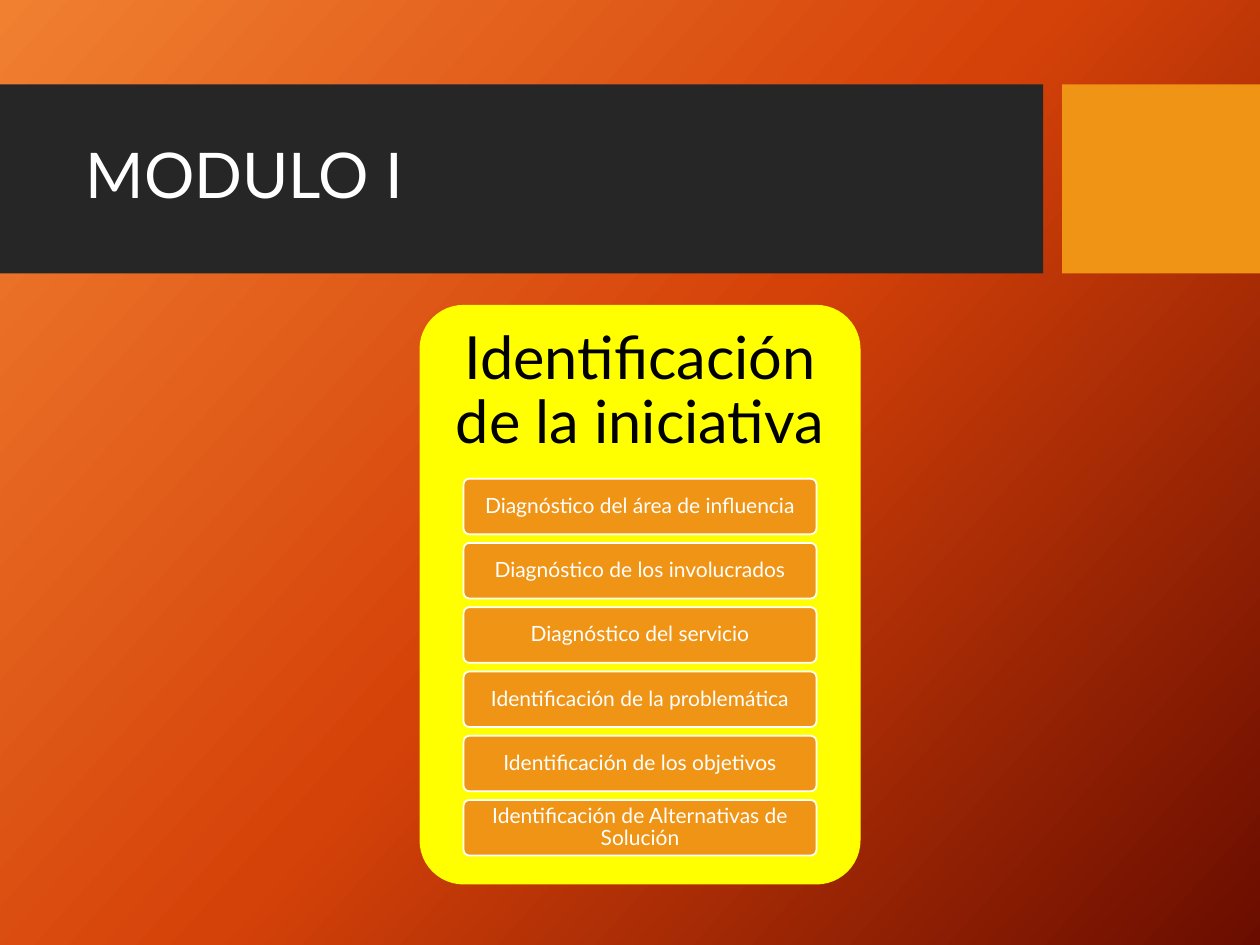
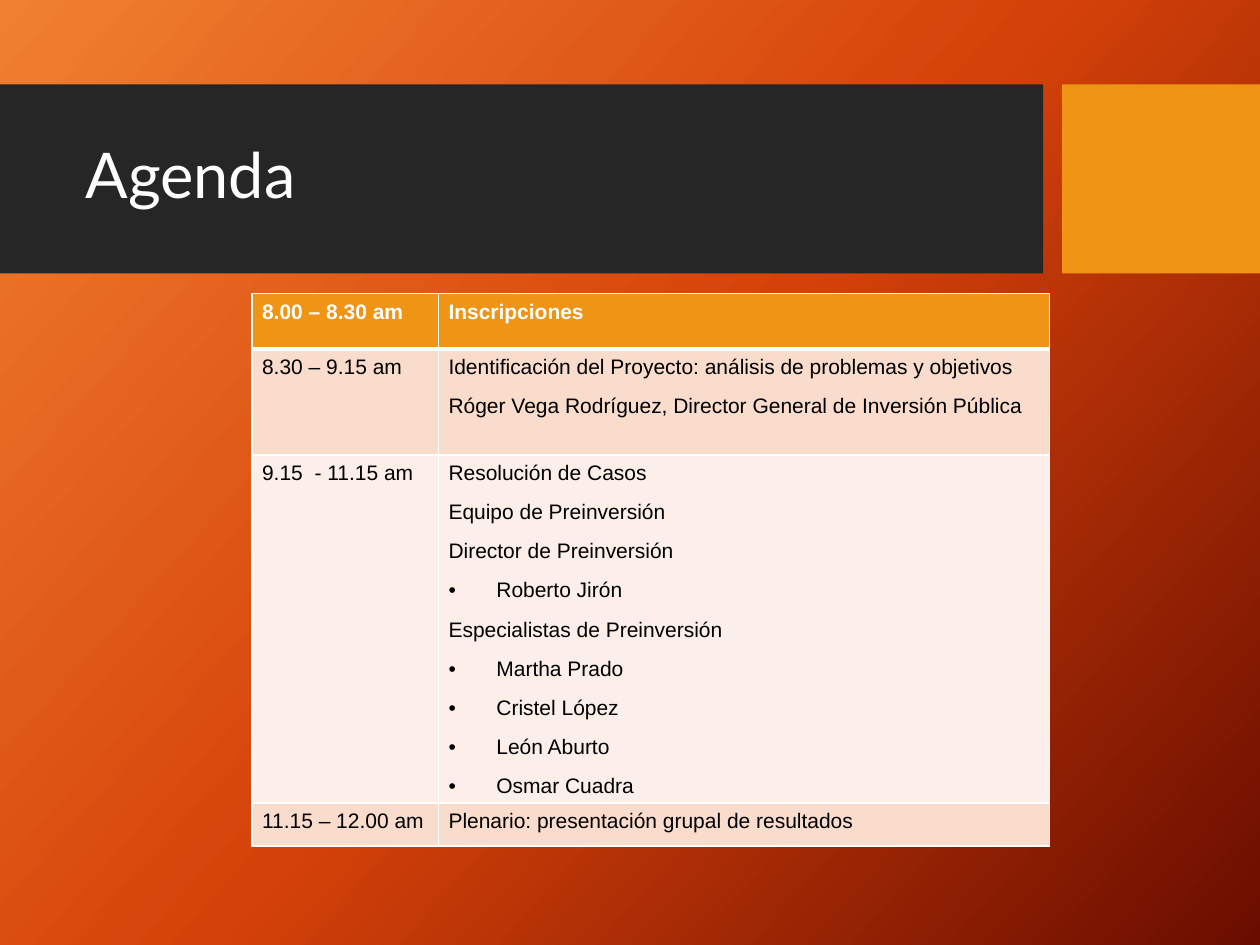
from copy import deepcopy

from lxml.etree import SubElement
from pptx import Presentation
from pptx.dml.color import RGBColor
from pptx.enum.shapes import MSO_SHAPE as Preset
from pptx.enum.text import MSO_ANCHOR as Anchor, MSO_AUTO_SIZE as AutoSize, PP_ALIGN as Align
from pptx.oxml.ns import qn
from pptx.util import Inches, Pt

WHITE = RGBColor(0xFF, 0xFF, 0xFF)
BLACK = RGBColor(0x00, 0x00, 0x00)
CHARCOAL = RGBColor(0x26, 0x26, 0x26)
ORANGE = RGBColor(0xF0, 0x94, 0x15)
YELLOW = RGBColor(0xFF, 0xFF, 0x00)
PEACH = RGBColor(0xF9, 0xDC, 0xCC)
PALE_PEACH = RGBColor(0xFC, 0xEE, 0xE8)
BACKGROUND_STOPS = [
    (0, RGBColor(0xF1, 0x80, 0x31)),
    (0.5, RGBColor(0xD5, 0x42, 0x09)),
    (1, RGBColor(0x6A, 0x0D, 0x00)),
]
HEADING_FONT = "Lato"
TABLE_FONT = "Arial"
BULLET = "• "

TOPICS = [
    "Diagnóstico del área de influencia",
    "Diagnóstico de los involucrados",
    "Diagnóstico del servicio",
    "Identificación de la problemática",
    "Identificación de los objetivos",
    "Identificación de Alternativas de Solución",
]
AGENDA = [
    ("8.00 – 8.30 am", ["Inscripciones"]),
    ("8.30 – 9.15 am", [
        "Identificación del Proyecto: análisis de problemas y objetivos",
        "Róger Vega Rodríguez, Director General de Inversión Pública",
    ]),
    ("9.15  - 11.15 am", [
        "Resolución de Casos",
        "Equipo de Preinversión",
        "Director de Preinversión",
        "• Roberto Jirón",
        "Especialistas de Preinversión",
        "• Martha Prado",
        "• Cristel López",
        "• León Aburto",
        "• Osmar Cuadra",
    ]),
    ("11.15 – 12.00 am", ["Plenario: presentación grupal de resultados"]),
]


class Deck:
    """Holds the shared style and the slide being built."""

    def __init__(self):
        self.prs = Presentation()
        self.prs.slide_width, self.prs.slide_height = Inches(10), Inches(7.5)
        self.slide = None
        self.set_background()

    def set_background(self):
        master = self.prs.slide_master
        fill = master.background.fill
        fill.gradient()
        fill.gradient_angle = 360 - 42  # python-pptx counts counter-clockwise
        stop_list = next(master.element.iter(qn("a:gsLst")))
        stop_list.append(deepcopy(stop_list[0]))
        for stop, (position, color) in zip(fill.gradient_stops, BACKGROUND_STOPS):
            stop.position = position
            stop.color.rgb = color

    def new_slide(self, heading):
        """Start a slide with its title on the dark band."""
        self.slide = self.prs.slides.add_slide(self.prs.slide_layouts[5])
        title = self.slide.shapes.title
        for left, width, color in ((0, 8.28, CHARCOAL), (8.43, 1.57, ORANGE)):
            band = self.shape(Preset.RECTANGLE, left, 0.67, width, 1.5, color)
            title.element.addprevious(band.element)
        title.left, title.top = Inches(0.58), Inches(0.82)
        title.width, title.height = Inches(7.54), Inches(1.18)
        self.set_text(title, heading, 36, WHITE, Align.LEFT)

    def shape(self, preset, left, top, width, height, color, outline=None):
        shape = self.slide.shapes.add_shape(
            preset, Inches(left), Inches(top), Inches(width), Inches(height))
        shape.shadow.inherit = False
        shape.fill.solid()
        shape.fill.fore_color.rgb = color
        if outline is None:
            shape.line.fill.background()
        else:
            shape.line.color.rgb = outline
            shape.line.width = Pt(1)
        if preset == Preset.ROUNDED_RECTANGLE:
            shape.adjustments[0] = 0.1
        return shape

    def text_box(self, left, top, width, height):
        return self.slide.shapes.add_textbox(
            Inches(left), Inches(top), Inches(width), Inches(height))

    def set_text(self, holder, text, size, color, align=Align.CENTER, inset=None):
        frame = holder.text_frame
        frame.text = text
        frame.word_wrap = True
        frame.auto_size = AutoSize.NONE
        frame.vertical_anchor = Anchor.MIDDLE
        if inset is not None:
            frame.margin_left = frame.margin_right = Inches(inset)
            frame.margin_top = frame.margin_bottom = Inches(inset)
        paragraph = frame.paragraphs[0]
        paragraph.alignment = align
        paragraph.line_spacing = 0.9
        self.set_font(paragraph, HEADING_FONT, size, color)

    def set_font(self, paragraph, name, size, color, bold=False):
        font = paragraph.font
        font.name, font.size, font.bold = name, Pt(size), bold
        font.color.rgb = color

    def table(self, left, top, column_widths, row_heights):
        table = self.slide.shapes.add_table(
            len(row_heights), len(column_widths), Inches(left), Inches(top),
            Inches(sum(column_widths)), Inches(sum(row_heights))).table
        for column, width in zip(table.columns, column_widths):
            column.width = Inches(width)
        for row, height in zip(table.rows, row_heights):
            row.height = Inches(height)
        return table

    def cell(self, cell, lines, fill, color, bold, top_border, bottom_border):
        cell.margin_left = cell.margin_right = Inches(0.08)
        cell.margin_top = cell.margin_bottom = Inches(0.04)
        frame = cell.text_frame
        for index, line in enumerate(lines):
            paragraph = frame.paragraphs[0] if index == 0 else frame.add_paragraph()
            paragraph.text = line.removeprefix(BULLET)
            if line.startswith(BULLET):
                self.add_bullet(paragraph)
            paragraph.line_spacing = 1.07
            paragraph.space_after = Pt(8)
            self.set_font(paragraph, TABLE_FONT, 12, color, bold)
        self.cell_borders(cell, L=1, R=1, T=top_border, B=bottom_border)
        cell.fill.solid()
        cell.fill.fore_color.rgb = fill

    def add_bullet(self, paragraph):
        properties = paragraph._p.get_or_add_pPr()
        properties.set("marL", str(Inches(0.38)))
        properties.set("indent", str(-Inches(0.38)))
        SubElement(properties, qn("a:buFont"), typeface=TABLE_FONT)
        SubElement(properties, qn("a:buChar"), char=BULLET.strip())

    def cell_borders(self, cell, **widths):
        properties = cell._tc.get_or_add_tcPr()
        for side, points in widths.items():
            line = SubElement(properties, qn(f"a:ln{side}"), w=str(Pt(points)))
            solid = SubElement(line, qn("a:solidFill"))
            SubElement(solid, qn("a:srgbClr"), val=str(WHITE))


def build_module(deck):
    deck.new_slide("MODULO I")
    deck.shape(Preset.ROUNDED_RECTANGLE, 3.33, 2.42, 3.5, 4.6, YELLOW)
    heading = deck.text_box(3.33, 2.42, 3.5, 1.38)
    deck.set_text(heading, "Identificación de la iniciativa", 34, BLACK, inset=0.14)
    for index, topic in enumerate(TOPICS):
        box = deck.shape(Preset.ROUNDED_RECTANGLE, 3.68, 3.8 + 0.51 * index,
                         2.8, 0.44, ORANGE, outline=WHITE)
        deck.set_text(box, topic, 12, WHITE, inset=0.03)


def build_agenda(deck):
    deck.new_slide("Agenda")
    table = deck.table(2, 2.33, [1.48, 4.85], [0.44, 0.84, 2.76, 0.34])
    for row, (time, activities) in enumerate(AGENDA):
        header = row == 0
        fill = ORANGE if header else PEACH if row % 2 else PALE_PEACH
        for column, lines in enumerate(([time], activities)):
            deck.cell(table.cell(row, column), lines, fill,
                      WHITE if header else BLACK, bold=header,
                      top_border=3 if row == 1 else 1,
                      bottom_border=3 if header else 1)


def main():
    deck = Deck()
    build_module(deck)
    build_agenda(deck)
    deck.prs.save("out.pptx")


if __name__ == "__main__":
    main()
